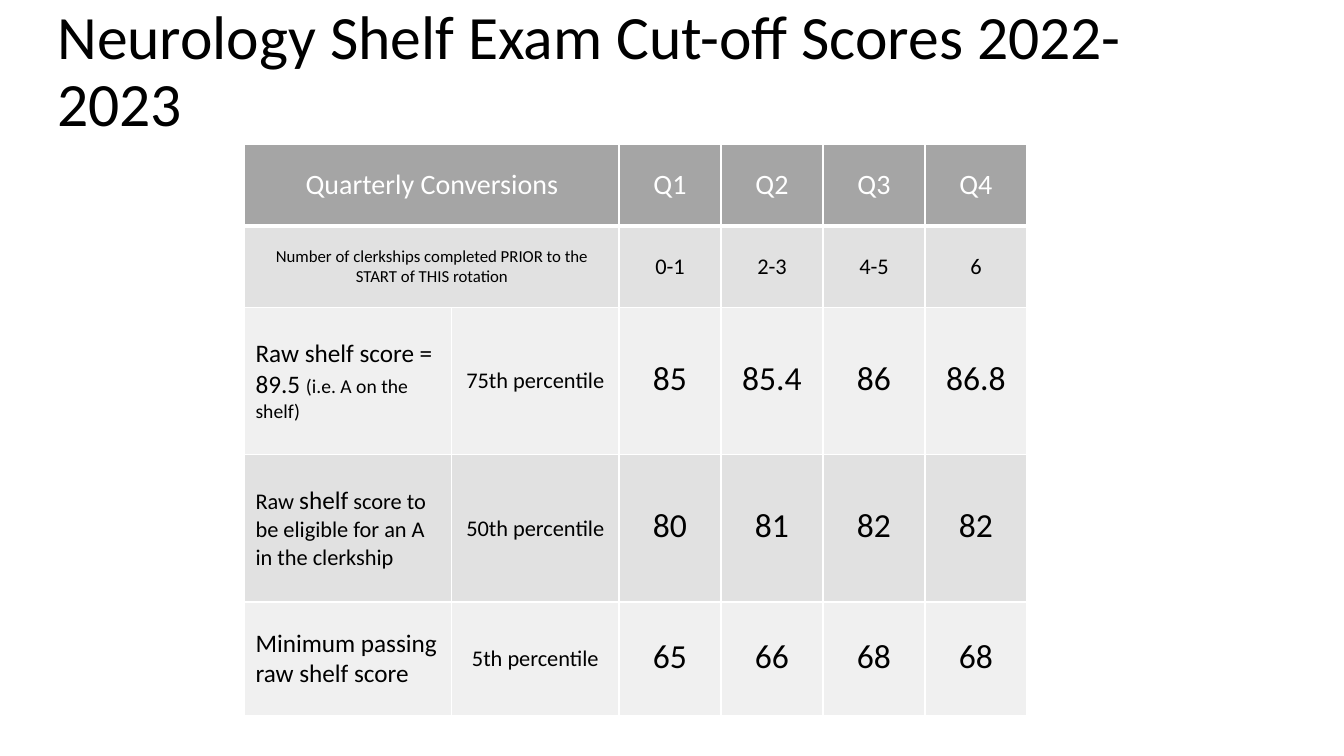
from lxml.etree import SubElement
from pptx import Presentation
from pptx.dml.color import RGBColor
from pptx.enum.text import MSO_ANCHOR, MSO_AUTO_SIZE, PP_ALIGN
from pptx.oxml.ns import qn
from pptx.util import Cm, Pt

COLORS = {"ink": "000000", "white": "FFFFFF", "head": "A5A5A5",
          "dark": "E1E1E1", "light": "F0F0F0"}
COLS = [5.21, 4.22] + [2.57] * 4
ROWS = [
    (2.06, "head", [("Quarterly Conversions", 20), None], ["Q1", "Q2", "Q3", "Q4"], 20),
    (2.06, "dark", [("Number of clerkships completed PRIOR to the START of THIS rotation", 12),
                    None], ["0-1", "2-3", "4-5", "6"], 16),
    (3.71, "light", [[("Raw shelf score = 89.5 ", 18), ("(i.e. A on the shelf)", 14)],
                     ("75th percentile", 16)], ["85", "85.4", "86", "86.8"], 24),
    (3.71, "dark", [[("Raw ", 16), ("shelf", 18),
                     (" score to be eligible for an A in the clerkship", 16)],
                    ("50th percentile", 16)], ["80", "81", "82", "82"], 24),
    (2.87, "light", [[("Minimum passing raw shelf score", 18)],
                     ("5th percentile", 16)], ["65", "66", "68", "68"], 24),
]


class Deck:
    """Holds the text style and the current slide."""

    def __init__(self, font):
        self.font = font
        self.prs = Presentation()
        self.prs.slide_width, self.prs.slide_height = Cm(33.87), Cm(19.05)
        self.slide = self.prs.slides.add_slide(self.prs.slide_layouts[5])

    def style(self, run, size, color):
        run.font.name = self.font
        run.font.size = Pt(size)
        run.font.color.rgb = RGBColor.from_string(COLORS[color])

    def title(self, text, left, top, width, height):
        shape = self.slide.shapes.title
        shape.left, shape.top, shape.width, shape.height = map(Cm, (left, top, width, height))
        frame = shape.text_frame
        frame.text = text
        frame.word_wrap = True
        frame.auto_size = MSO_AUTO_SIZE.NONE
        frame.vertical_anchor = MSO_ANCHOR.MIDDLE
        para = frame.paragraphs[0]
        para.alignment = PP_ALIGN.LEFT
        para.line_spacing = 0.9
        self.style(para.runs[0], 44, "ink")

    def border(self, cell, base):
        props = cell._tc.get_or_add_tcPr()
        for side in "LRTB":
            width = Pt(base if side == "B" else 1)
            line = SubElement(props, qn("a:ln" + side), w=str(width))
            fill = SubElement(line, qn("a:solidFill"))
            SubElement(fill, qn("a:srgbClr"), val=COLORS["white"])

    def cell(self, cell, parts, fill, pads, align):
        head = fill == "head"
        self.border(cell, 3 if head else 1)
        cell.fill.solid()
        cell.fill.fore_color.rgb = RGBColor.from_string(COLORS[fill])
        cell.vertical_anchor = MSO_ANCHOR.MIDDLE
        (cell.margin_left, cell.margin_top,
         cell.margin_right, cell.margin_bottom) = map(Cm, pads)
        para = cell.text_frame.paragraphs[0]
        para.alignment = align
        for text, size in parts:
            run = para.add_run()
            run.text = text
            self.style(run, size, "white" if head else "ink")

    def table(self, left, top, cols, rows):
        high = sum(row[0] for row in rows)
        grid = self.slide.shapes.add_table(
            len(rows), len(cols), Cm(left), Cm(top), Cm(sum(cols)), Cm(high)).table
        for col, width in zip(grid.columns, cols):
            col.width = Cm(width)
        for y, (height, fill, labels, scores, size) in enumerate(rows):
            grid.rows[y].height = Cm(height)
            if labels[1] is None:
                grid.cell(y, 0).merge(grid.cell(y, 1))
            for x, item in enumerate(labels + [(score, size) for score in scores]):
                mixed = isinstance(item, list)
                parts = item if mixed else [item] if item else []
                tight = x > 1 and size == 24
                pads = (0.03, 0.03, 0.03, 0.13) if tight else (0.27, 0.14, 0.27, 0.14)
                align = PP_ALIGN.LEFT if mixed else PP_ALIGN.CENTER
                self.cell(grid.cell(y, x), parts, fill, pads, align)


def main():
    deck = Deck("Calibri")
    deck.title("Neurology Shelf Exam Cut-off Scores 2022-2023", 1.19, 0, 30.33, 3.68)
    deck.table(6.17, 3.63, COLS, ROWS)
    deck.prs.save("out.pptx")


if __name__ == "__main__":
    main()
